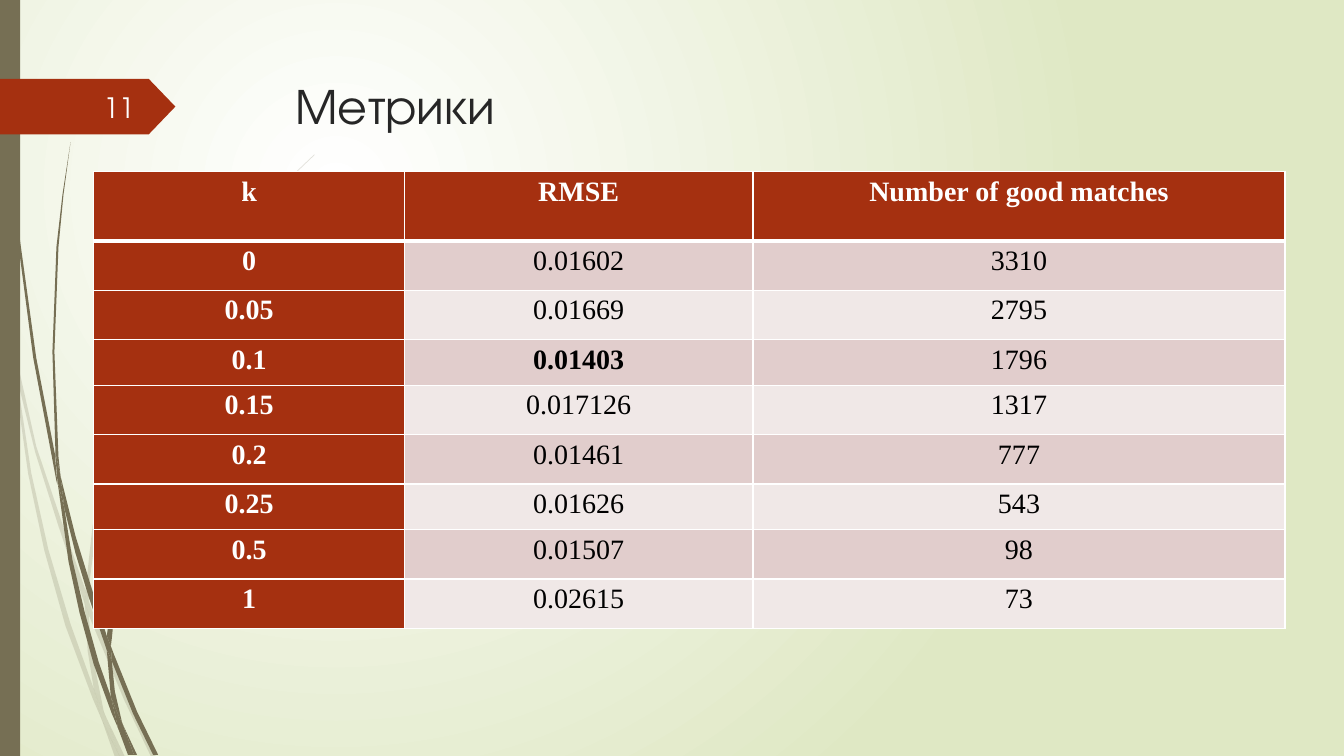
import pptx
import pptx.util
import pptx.dml.color
import pptx.enum.shapes
import pptx.enum.text
import pptx.oxml

Pt = pptx.util.Pt
RGB = pptx.dml.color.RGBColor
SHAPE = pptx.enum.shapes.MSO_SHAPE
ALIGN = pptx.enum.text.PP_ALIGN
ANCHOR = pptx.enum.text.MSO_ANCHOR

WHITE = RGB(0xFF, 0xFF, 0xFF)
BLACK = RGB(0, 0, 0)
INK = RGB(0x26, 0x26, 0x26)
PAPER = RGB(0xFE, 0xFF, 0xFF)
RUST = RGB(0xA5, 0x30, 0x10)
OLIVE = RGB(0x76, 0x6F, 0x54)
GREEN = RGB(0xDF, 0xE8, 0xC4)
BANDS = [RGB(0xE1, 0xCD, 0xCC), RGB(0xF0, 0xE8, 0xE7)]
SANS, SERIF = "TeX Gyre Adventor", "Times New Roman"
NS = 'xmlns:a="http://schemas.openxmlformats.org/drawingml/2006/main"'

# Outlines of the grass blades, in units of 0.72 pt
UNIT = Pt(0.72)
PALE = [
    [(11, 350), (9, 322), (0, 282), (0, 299), (10, 344)],
    [(58, 522), (84, 599), (85, 586), (62, 520), (36, 443), (14, 345),
     (17, 376), (35, 449)],
    [(92, 607), (88, 596), (88, 610), (123, 694), (150, 751), (155, 751),
     (127, 692)],
    [(119, 751), (124, 751), (105, 711)],
    [(93, 683), (70, 619), (48, 545), (31, 469), (17, 376), (11, 350),
     (28, 470), (44, 546), (65, 621), (92, 693), (101, 714), (99, 707)],
    [(84, 599), (87, 646), (93, 683), (96, 692), (105, 711), (103, 706),
     (91, 646), (88, 610), (88, 608)],
    [(88, 584), (96, 522), (110, 462), (132, 405), (160, 349), (193, 296),
     (229, 245), (268, 198), (290, 175), (312, 154), (312, 153), (289, 175),
     (268, 197), (228, 244), (191, 295), (158, 348), (129, 403), (107, 461),
     (92, 521), (85, 584), (85, 586), (88, 596)],
    [(101, 714), (114, 751), (119, 751)],
    [(88, 608), (88, 610), (88, 596), (85, 586), (84, 599)],
    [(96, 692), (93, 683), (99, 707), (101, 714), (119, 751), (105, 711)],
]
DARK = [
    [(7, 110), (17, 233), (33, 355), (56, 477), (57, 481), (55, 457),
     (55, 453), (36, 355), (19, 232), (8, 109), (5, 48), (4, 0), (3, 0),
     (4, 48)],
    [(88, 592), (106, 645), (106, 633), (106, 631), (93, 590), (75, 532),
     (60, 472), (64, 505), (75, 549)],
    [(113, 649), (110, 641), (111, 656), (132, 708), (152, 749), (157, 749),
     (136, 706)],
    [(110, 691), (98, 657), (84, 607), (72, 556), (64, 505), (57, 477),
     (68, 557), (79, 608), (93, 659), (111, 708), (117, 722), (116, 717)],
    [(60, 472), (58, 453), (54, 349), (58, 245), (63, 193), (70, 141),
     (62, 193), (56, 245), (52, 349), (55, 449)],
    [(133, 749), (136, 749), (122, 719)],
    [(57, 477), (64, 505), (60, 472), (55, 449), (55, 453)],
    [(111, 633), (115, 592), (125, 552), (140, 513), (158, 476), (180, 440),
     (205, 406), (231, 374), (245, 359), (261, 344), (260, 344), (245, 358),
     (231, 373), (204, 405), (178, 439), (156, 474), (137, 512), (122, 551),
     (111, 591), (106, 631), (110, 641)],
    [(117, 722), (127, 749), (131, 749)],
    [(106, 645), (110, 691), (116, 706), (122, 719), (121, 716), (114, 686),
     (111, 656), (109, 651)],
    [(106, 645), (109, 651), (111, 656), (110, 641), (106, 631), (106, 633)],
    [(116, 706), (110, 691), (116, 717), (117, 722), (130, 749), (133, 749),
     (122, 719)],
]
ROWS = [
    ("k", "RMSE", "Number of good matches"),
    ("0", "0.01602", "3310"),
    ("0.05", "0.01669", "2795"),
    ("0.1", "0.01403", "1796"),
    ("0.15", "0.017126", "1317"),
    ("0.2", "0.01461", "777"),
    ("0.25", "0.01626", "543"),
    ("0.5", "0.01507", "98"),
    ("1", "0.02615", "73"),
]
BEST = "0.01403"


def write(frame, text, font=SANS, size=20, color=INK, bold=False,
          align=ALIGN.LEFT, space=None):
    para = frame.paragraphs[0]
    para.alignment = align
    para.line_spacing = space
    run = para.add_run()
    run.text = text
    run.font.name, run.font.size, run.font.bold = font, Pt(size), bold
    run.font.color.rgb = color


def paint(shape, color, alpha=None):
    shape.shadow.inherit = False
    shape.line.fill.background()
    shape.fill.solid()
    shape.fill.fore_color.rgb = color
    if alpha:
        tint = shape.fill._xPr.find(".//" + pptx.oxml.ns.qn("a:srgbClr"))
        tint.append(pptx.oxml.parse_xml(f'<a:alpha {NS} val="{alpha * 1000}"/>'))


def add_blade(slide, left, top, edge, alpha=None):
    form = slide.shapes.build_freeform(*edge[0], scale=UNIT)
    form.add_line_segments(edge[1:], close=True)
    blade = form.convert_to_shape(Pt(left), Pt(top))
    paint(blade, OLIVE, alpha)


def add_back(slide):
    fill = slide.background.fill
    fill.solid()
    old = fill._xPr.find(pptx.oxml.ns.qn("a:solidFill"))
    fill._xPr.replace(old, pptx.oxml.parse_xml(
        f'<a:gradFill {NS} rotWithShape="1"><a:gsLst>'
        f'<a:gs pos="0"><a:srgbClr val="{WHITE}"/></a:gs>'
        f'<a:gs pos="100000"><a:srgbClr val="{GREEN}"/></a:gs></a:gsLst>'
        '<a:path path="circle"><a:fillToRect l="50000" t="50000" '
        'r="100000" b="100000"/></a:path></a:gradFill>'))


def add_side(slide, left, top, height):
    for edge in PALE:
        add_blade(slide, left, top, edge, alpha=20)
    for edge in DARK:
        add_blade(slide, left, top, edge)
    bar = slide.shapes.add_shape(SHAPE.RECTANGLE, Pt(left), Pt(top),
                                 Pt(14.4), Pt(height))
    paint(bar, OLIVE)


def add_number(slide, left, top, width, height, text):
    tag = slide.shapes.add_shape(SHAPE.PENTAGON, Pt(left), Pt(top),
                                 Pt(width), Pt(height))
    tag.adjustments[0] = 0.48
    paint(tag, RUST)
    box = slide.shapes.add_textbox(Pt(left + 41.8), Pt(top + 5.7),
                                   Pt(61.2), Pt(28.8))
    box.text_frame.word_wrap = True
    box.text_frame.vertical_anchor = ANCHOR.MIDDLE
    write(box.text_frame, text, color=PAPER, align=ALIGN.RIGHT)


def add_title(slide, left, top, width, height, text):
    title = slide.shapes.title
    title.left, title.top = Pt(left), Pt(top)
    title.width, title.height = Pt(width), Pt(height)
    frame = title.text_frame
    frame.auto_size = pptx.enum.text.MSO_AUTO_SIZE.NONE
    frame.vertical_anchor = ANCHOR.TOP
    write(frame, text, size=36)


def style(cell, fill, base):
    cell.margin_left = cell.margin_right = Pt(5)
    cell.margin_top = cell.margin_bottom = 0
    props = cell._tc.get_or_add_tcPr()
    for side, width in (("L", 1), ("R", 1), ("T", 1), ("B", base)):
        props.append(pptx.oxml.parse_xml(
            f'<a:ln{side} {NS} w="{Pt(width)}"><a:solidFill>'
            f'<a:srgbClr val="{WHITE}"/></a:solidFill></a:ln{side}>'))
    cell.fill.solid()
    cell.fill.fore_color.rgb = fill


def add_grid(slide, left, top, widths):
    grid = slide.shapes.add_table(len(ROWS), len(widths), Pt(left), Pt(top),
                                  Pt(sum(widths)), Pt(326.2)).table
    for col, width in zip(grid.columns, widths):
        col.width = Pt(width)
    for i, row in enumerate(ROWS):
        head = i == 0
        grid.rows[i].height = Pt(49.6 if head else 32.6 if i % 3 == 0 else 35.3)
        for j, text in enumerate(row):
            key = head or j == 0
            cell = grid.cell(i, j)
            style(cell, RUST if key else BANDS[(i - 1) % 2], 3 if head else 1)
            write(cell.text_frame, text, font=SERIF, space=1.15,
                  color=WHITE if key else BLACK, bold=key or text == BEST,
                  align=ALIGN.CENTER)


def main():
    deck = pptx.Presentation()
    deck.slide_width, deck.slide_height = Pt(960), Pt(540)
    slide = deck.slides.add_slide(deck.slide_layouts[5])
    add_back(slide)
    add_side(slide, 0, 0, 540)
    add_number(slide, 0, 56.3, 125.3, 39.7, "11")
    add_title(slide, 204, 49, 702, 56.9, "Метрики")
    add_grid(slide, 67, 122.4, (221.8, 249.1, 380))
    deck.save("out.pptx")


if __name__ == "__main__":
    main()
